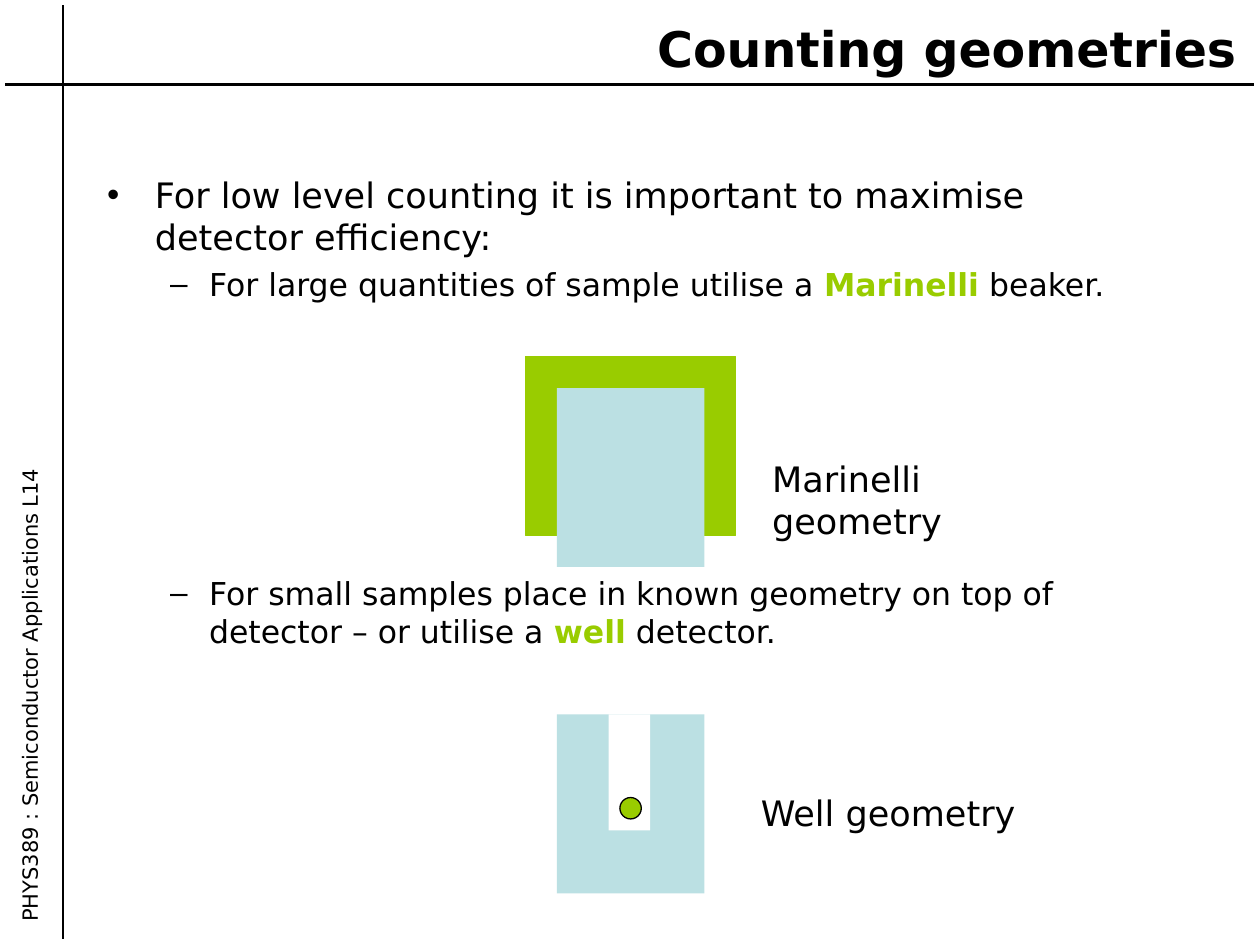
"""Build the slide on counting geometries."""
from lxml import etree
from pptx import Presentation
from pptx.dml.color import RGBColor
from pptx.enum.shapes import MSO_CONNECTOR, MSO_SHAPE
from pptx.enum.text import MSO_ANCHOR, MSO_AUTO_SIZE, PP_ALIGN
from pptx.oxml.ns import qn
from pptx.util import Inches, Pt

BLACK = RGBColor(0x00, 0x00, 0x00)
WHITE = RGBColor(0xFF, 0xFF, 0xFF)
GREEN = RGBColor(0x99, 0xCC, 0x00)
BLUE = RGBColor(0xBB, 0xE0, 0xE3)
FONT = "DejaVu Sans"
RECT, OVAL = MSO_SHAPE.RECTANGLE, MSO_SHAPE.OVAL
STRAIGHT = MSO_CONNECTOR.STRAIGHT
MIDDLE, TOP = MSO_ANCHOR.MIDDLE, MSO_ANCHOR.TOP
LEFT, RIGHT = PP_ALIGN.LEFT, PP_ALIGN.RIGHT
NO_FIT = MSO_AUTO_SIZE.NONE


def style(run, size, color=BLACK, bold=False):
    """Format one run."""
    font = run.font
    font.name, font.size, font.bold = FONT, Pt(size), bold
    font.color.rgb = color


def place(shape, left, top, width, height):
    """Move and size a shape, in inches."""
    shape.left, shape.top = Inches(left), Inches(top)
    shape.width, shape.height = Inches(width), Inches(height)


def add_rule(slide, x1, y1, x2, y2):
    """Add a black frame line."""
    rule = slide.shapes.add_connector(
        STRAIGHT, Inches(x1), Inches(y1), Inches(x2), Inches(y2))
    rule.line.color.rgb = BLACK
    rule.line.width = Pt(1.5)
    etree.SubElement(rule._element.spPr, qn("a:effectLst"))


def add_block(slide, kind, box, fill, edge=None):
    """Add a filled shape with an optional thin edge."""
    block = slide.shapes.add_shape(kind, *map(Inches, box))
    block.shadow.inherit = False
    block.fill.solid()
    block.fill.fore_color.rgb = fill
    if edge is None:
        block.line.fill.background()
    else:
        block.line.color.rgb = edge
        block.line.width = Pt(0.75)


def add_label(slide, text, box, size=20, turn=0):
    """Add a text box, turned if asked."""
    label = slide.shapes.add_textbox(*map(Inches, box))
    label.rotation = turn
    frame = label.text_frame
    frame.word_wrap = True
    frame.text = text
    style(frame.paragraphs[0].runs[0], size)


def set_title(slide, text):
    """Fill the title placeholder."""
    title = slide.shapes.title
    place(title, 0.58, 0.17, 9.33, 0.42)
    frame = title.text_frame
    frame.text = text
    frame.auto_size = NO_FIT
    frame.vertical_anchor = MIDDLE
    para = frame.paragraphs[0]
    para.alignment = RIGHT
    style(para.runs[0], 28, bold=True)


def add_item(para, parts, level, gap):
    """Fill a bullet; every second part is a green key word."""
    margin, hang, mark, size = [
        (0.38, 0.38, "•", 20), (0.81, 0.31, "–", 18)][level]
    para.level = level
    para.alignment = LEFT
    para.space_before = Pt(gap)
    props = para._p.get_or_add_pPr()
    props.set("marL", str(Inches(margin)))
    props.set("indent", str(-Inches(hang)))
    etree.SubElement(props, qn("a:buChar")).set("char", mark)
    for i, part in enumerate(parts):
        run = para.add_run()
        run.text = part
        key = i % 2 == 1
        style(run, size, GREEN if key else BLACK, key)


def set_body(slide, items):
    """Fill the body placeholder with bullets."""
    body = slide.placeholders[1]
    place(body, 0.75, 1.33, 8.5, 5.33)
    frame = body.text_frame
    frame.auto_size = NO_FIT
    frame.vertical_anchor = TOP
    for i, item in enumerate(items):
        para = frame.add_paragraph() if i else frame.paragraphs[0]
        add_item(para, *item)


def main():
    """Build and save the slide."""
    deck = Presentation()
    deck.slide_width, deck.slide_height = Inches(10), Inches(7.5)
    slide = deck.slides.add_slide(deck.slide_layouts[1])

    add_rule(slide, 0.04, 0.67, 9.95, 0.67)
    add_rule(slide, 0.5, 0.04, 0.5, 7.45)
    add_label(slide, "PHYS389 : Semiconductor Applications L14",
              (-3.04, 3.96, 6.58, 0.33), 12, 270)
    set_title(slide, "Counting geometries")
    set_body(slide, [
        (["For low level counting it is important to maximise "
          "detector efficiency:"], 0, 0),
        (["For large quantities of sample utilise a ", "Marinelli",
          " beaker."], 1, 4),
        (["For small samples place in known geometry on top of detector "
          "– or utilise a ", "well", " detector."], 1, 155),
    ])

    add_block(slide, RECT, (4.42, 5.67, 1.17, 1.42), BLUE)
    add_block(slide, RECT, (4.83, 5.67, 0.33, 0.92), WHITE)
    add_block(slide, OVAL, (4.92, 6.33, 0.17, 0.17), GREEN, BLACK)
    add_label(slide, "Well geometry", (5.94, 6.23, 2.23, 0.43))

    add_block(slide, RECT, (4.17, 2.83, 1.67, 1.42), GREEN, GREEN)
    add_block(slide, RECT, (4.42, 3.08, 1.17, 1.42), BLUE)
    add_label(slide, "Marinelli geometry", (6.03, 3.58, 2.7, 0.43))

    deck.save("out.pptx")


if __name__ == "__main__":
    main()
